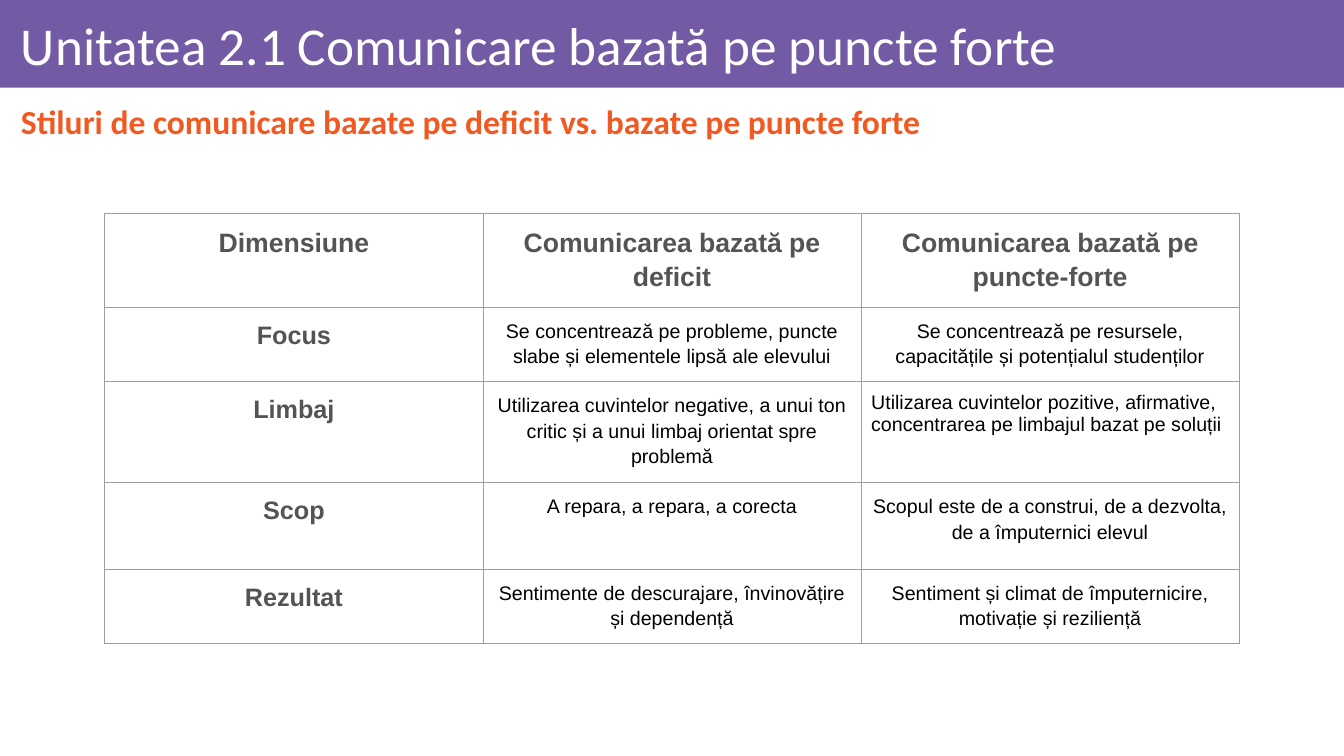
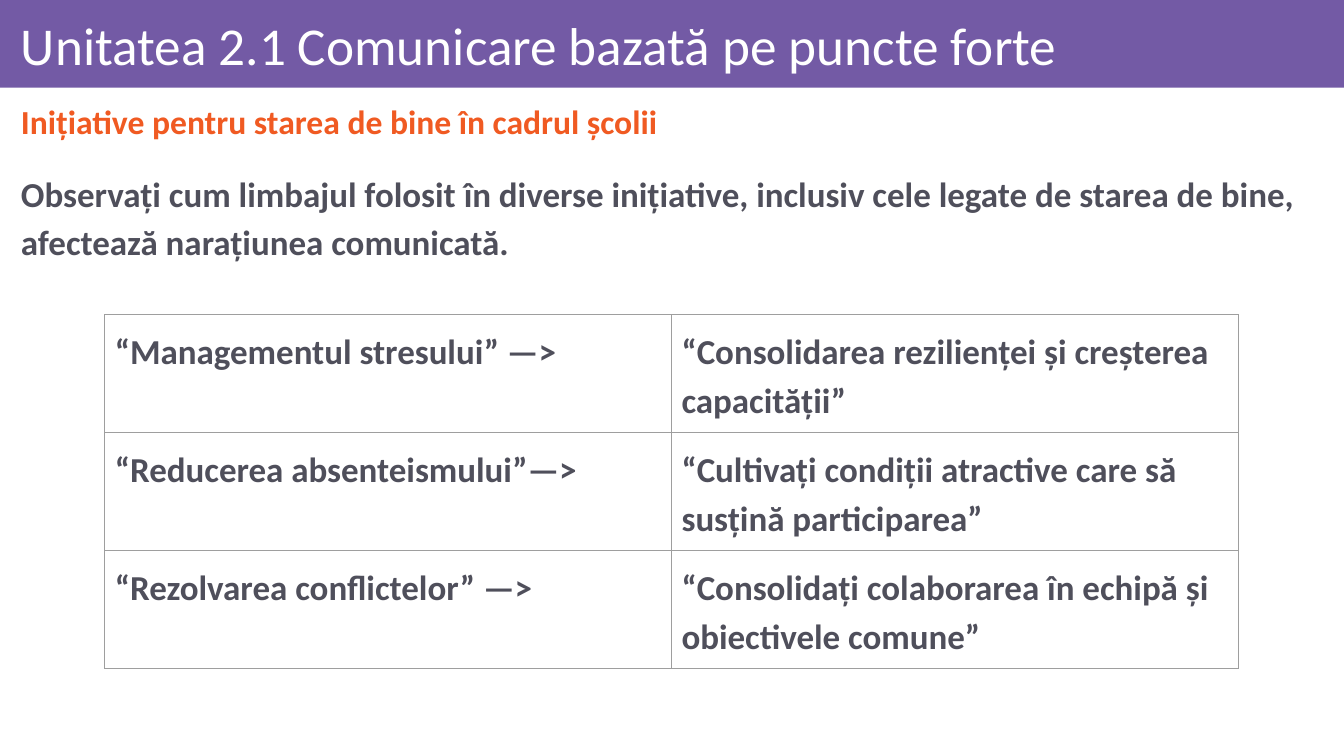
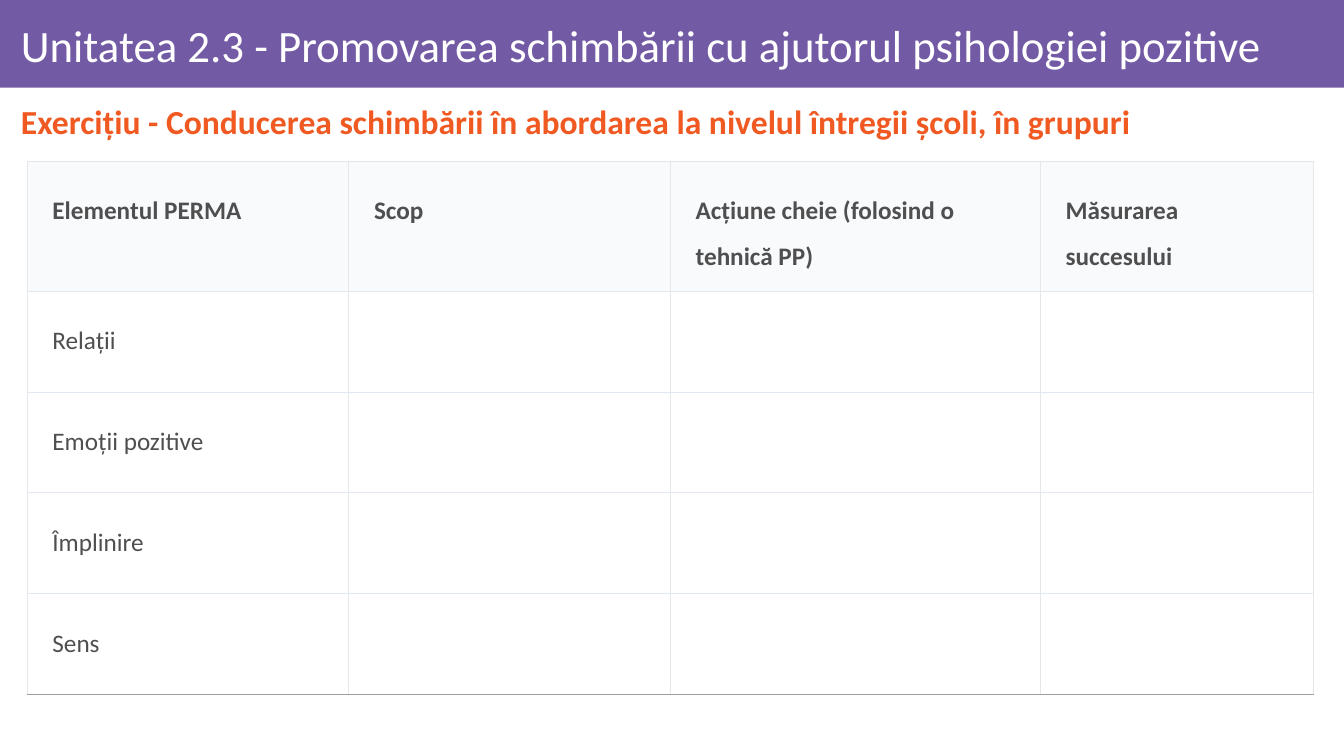
from dataclasses import dataclass, replace

from lxml import etree
from pptx import Presentation
from pptx.dml.color import RGBColor
from pptx.enum.shapes import MSO_SHAPE
from pptx.enum.text import MSO_ANCHOR, PP_ALIGN
from pptx.oxml.ns import qn
from pptx.slide import Slide
from pptx.table import _Cell
from pptx.text.text import TextFrame
from pptx.util import Inches, Pt

RECTANGLE = MSO_SHAPE.RECTANGLE
TOP, MIDDLE = MSO_ANCHOR.TOP, MSO_ANCHOR.MIDDLE
LEFT, CENTER, JUSTIFY = PP_ALIGN.LEFT, PP_ALIGN.CENTER, PP_ALIGN.JUSTIFY

COLORS = {
    "band": "735AA5",
    "white": "FFFFFF",
    "accent": "F05A22",
    "black": "000000",
    "label": "545454",
    "statement": "4F4F5B",
    "exercise": "4F4F50",
    "header_fill": "F8FAFC",
    "grid": "9E9E9E",
    "side": "E5E7EB",
    "rule": "E2E8F0",
}
SLIDE_WIDTH, SLIDE_HEIGHT = 13.33, 7.5
TEXT_LEFT, TEXT_WIDTH = 0.11, 13.06


@dataclass(frozen=True)
class TextStyle:
    size: float
    color: str
    bold: bool = False
    font: str = "Calibri"
    align: PP_ALIGN = LEFT
    spacing: float = 1.0
    before: float = 0
    after: float = 0


@dataclass(frozen=True)
class TextArea:
    top: float
    height: float
    anchor: MSO_ANCHOR
    insets: tuple[float, float, float, float]
    style: TextStyle


@dataclass(frozen=True)
class Border:
    color: str
    width: float = 0.75


@dataclass(frozen=True)
class CellFormat:
    style: TextStyle
    insets: tuple[float, float, float, float]
    borders: dict[str, Border]
    fill: str | None = None


@dataclass(frozen=True)
class Grid:
    left: float
    top: float
    columns: list[float]
    rows: list[float]


TITLE = TextArea(0.09, 0.78, MIDDLE, (0.1, 0.06, 0.06, 0.06),
                 TextStyle(38, "white", spacing=0.9))
SUBTITLE = TextArea(0.93, 0.6, MIDDLE, (0.1, 0.05, 0.1, 0.05),
                    TextStyle(24, "accent", True, align=JUSTIFY, spacing=0.9))
STATEMENT_STYLE = TextStyle(25, "statement", True, spacing=1.15, before=12)
STATEMENT = TextArea(1.6, 5.78, TOP, (0.1, 0.05, 0.1, 0.05), STATEMENT_STYLE)

GRID_BORDERS = {side: Border("grid") for side in "LRTB"}
EVEN_INSETS = (0.1,) * 4
WIDE_INSETS = (0.25, 0.19, 0.25, 0.19)


def apply_values(target: object, values: dict[str, object]) -> None:
    for name, value in values.items():
        setattr(target, name, value)


def write_text(frame: TextFrame, text: str, style: TextStyle) -> None:
    paragraph = frame.paragraphs[0]
    apply_values(paragraph, {
        "alignment": style.align,
        "line_spacing": style.spacing,
        "space_before": Pt(style.before),
        "space_after": Pt(style.after),
    })
    run = paragraph.add_run()
    run.text = text
    apply_values(run.font, {"name": style.font, "size": Pt(style.size), "bold": style.bold})
    run.font.color.rgb = RGBColor.from_string(COLORS[style.color])


def set_insets(target: TextFrame | _Cell, insets: tuple[float, float, float, float]) -> None:
    sides = ("left", "top", "right", "bottom")
    apply_values(target, {f"margin_{side}": Inches(inset) for side, inset in zip(sides, insets)})


def add_text(slide: Slide, text: str, area: TextArea) -> None:
    frame = slide.shapes.add_textbox(
        Inches(TEXT_LEFT), Inches(area.top), Inches(TEXT_WIDTH), Inches(area.height)
    ).text_frame
    apply_values(frame, {"word_wrap": True, "vertical_anchor": area.anchor})
    set_insets(frame, area.insets)
    write_text(frame, text, area.style)


def add_unit_slide(deck: Presentation, title: str, subtitle: str, title_size: float = 38) -> Slide:
    slide = deck.slides.add_slide(deck.slide_layouts[6])
    band = slide.shapes.add_shape(RECTANGLE, 0, 0, Inches(SLIDE_WIDTH), Inches(0.87))
    band.shadow.inherit = False
    band.fill.solid()
    band.fill.fore_color.rgb = RGBColor.from_string(COLORS["band"])
    band.line.fill.background()
    add_text(slide, title, replace(TITLE, style=replace(TITLE.style, size=title_size)))
    add_text(slide, subtitle, SUBTITLE)
    return slide


def format_cell(cell: _Cell, text: str, look: CellFormat) -> None:
    set_insets(cell, look.insets)
    properties = cell._tc.get_or_add_tcPr()
    for side in "LRTB":
        border = look.borders[side]
        line = etree.SubElement(properties, qn(f"a:ln{side}"), w=str(Pt(border.width)))
        solid = etree.SubElement(line, qn("a:solidFill"))
        etree.SubElement(solid, qn("a:srgbClr"), val=COLORS[border.color])
    if look.fill:
        cell.fill.solid()
        cell.fill.fore_color.rgb = RGBColor.from_string(COLORS[look.fill])
    else:
        cell.fill.background()
    if text:
        write_text(cell.text_frame, text, look.style)


def add_grid(slide: Slide, grid: Grid, texts: list[list[str]],
             looks: list[list[CellFormat]]) -> None:
    table = slide.shapes.add_table(
        len(grid.rows), len(grid.columns), Inches(grid.left), Inches(grid.top),
        Inches(sum(grid.columns)), Inches(sum(grid.rows)),
    ).table
    apply_values(table, {"first_row": False, "horz_banding": False})
    for column, width in zip(table.columns, grid.columns):
        column.width = Inches(width)
    for row, height, row_texts, row_looks in zip(table.rows, grid.rows, texts, looks):
        row.height = Inches(height)
        for cell, text, look in zip(row.cells, row_texts, row_looks):
            format_cell(cell, text, look)


def add_styles_slide(deck: Presentation) -> None:
    slide = add_unit_slide(deck, "Unitatea 2.1 Comunicare bazată pe puncte forte",
                           "Stiluri de comunicare bazate pe deficit vs. bazate pe puncte forte")
    texts = [
        ["Dimensiune", "Comunicarea bazată pe deficit", "Comunicarea bazată pe puncte-forte"],
        ["Focus", "Se concentrează pe probleme, puncte slabe și elementele lipsă ale elevului",
         "Se concentrează pe resursele, capacitățile și potențialul studenților"],
        ["Limbaj",
         "Utilizarea cuvintelor negative, a unui ton critic și a unui limbaj orientat spre problemă",
         "Utilizarea cuvintelor pozitive, afirmative, concentrarea pe limbajul bazat pe soluții"],
        ["Scop", "A repara, a repara, a corecta",
         "Scopul este de a construi, de a dezvolta, de a împuternici elevul"],
        ["Rezultat", "Sentimente de descurajare, învinovățire și dependență",
         "Sentiment și climat de împuternicire, motivație și reziliență"],
    ]
    heading = TextStyle(19, "label", True, "Arial", CENTER, 1.15, 12, 12)
    dimension = replace(heading, size=18)
    trait = replace(heading, size=14, color="black", bold=False)
    tight_trait = replace(trait, after=0)
    plain_trait = TextStyle(14, "black", font="Arial")
    styles = [
        [heading] * 3,
        [dimension, tight_trait, tight_trait],
        [dimension, tight_trait, plain_trait],
        [dimension, trait, trait],
        [dimension, trait, trait],
    ]
    looks = [[CellFormat(style, EVEN_INSETS, GRID_BORDERS) for style in row] for row in styles]
    add_grid(slide, Grid(1.04, 2.12, [3.75] * 3, [0.88, 0.7, 0.95, 0.86, 0.7]), texts, looks)


def add_initiatives_slide(deck: Presentation) -> None:
    slide = add_unit_slide(deck, "Unitatea 2.1 Comunicare bazată pe puncte forte",
                           "Inițiative pentru starea de bine în cadrul școlii")
    add_text(slide, "Observați cum limbajul folosit în diverse inițiative, inclusiv cele legate "
                    "de starea de bine, afectează narațiunea comunicată.", STATEMENT)
    texts = [
        ["“Managementul stresului” —>", "“Consolidarea rezilienței și creșterea capacității”"],
        ["“Reducerea absenteismului”—>",
         "“Cultivați condiții atractive care să susțină participarea”"],
        ["“Rezolvarea conflictelor” —>",
         "“Consolidați colaborarea în echipă și obiectivele comune”"],
    ]
    look = CellFormat(replace(STATEMENT_STYLE, after=12), EVEN_INSETS, GRID_BORDERS)
    add_grid(slide, Grid(1.04, 3.12, [5.62] * 2, [1.17] * 3), texts, [[look] * 2] * 3)


def add_exercise_slide(deck: Presentation) -> None:
    slide = add_unit_slide(
        deck, "Unitatea 2.3 - Promovarea schimbării cu ajutorul psihologiei pozitive",
        "Exercițiu - Conducerea schimbării în abordarea la nivelul întregii școli, în grupuri", 32)
    headings = ["Elementul PERMA", "Scop", "Acțiune cheie (folosind o tehnică PP)",
                "Măsurarea succesului"]
    elements = ["Relații", "Emoții pozitive", "Împlinire", "Sens"]
    texts = [headings] + [[element, "", "", ""] for element in elements]
    side, rule = Border("side"), Border("rule", 0.68)
    borders = {"L": side, "R": side, "T": rule, "B": rule}
    body = CellFormat(TextStyle(18, "exercise", spacing=1.5), WIDE_INSETS, borders)
    header = replace(body, style=replace(body.style, bold=True),
                     borders={**borders, "T": side}, fill="header_fill")
    last = replace(body, borders={**borders, "B": Border("grid")})
    looks = [[look] * len(headings) for look in (header, body, body, body, last)]
    add_grid(slide, Grid(0.27, 1.6, [3.19, 3.19, 3.67, 2.71], [1.29] + [1.0] * 4), texts, looks)


def main() -> None:
    deck = Presentation()
    apply_values(deck, {"slide_width": Inches(SLIDE_WIDTH), "slide_height": Inches(SLIDE_HEIGHT)})
    add_styles_slide(deck)
    add_initiatives_slide(deck)
    add_exercise_slide(deck)
    deck.save("out.pptx")


if __name__ == "__main__":
    main()
